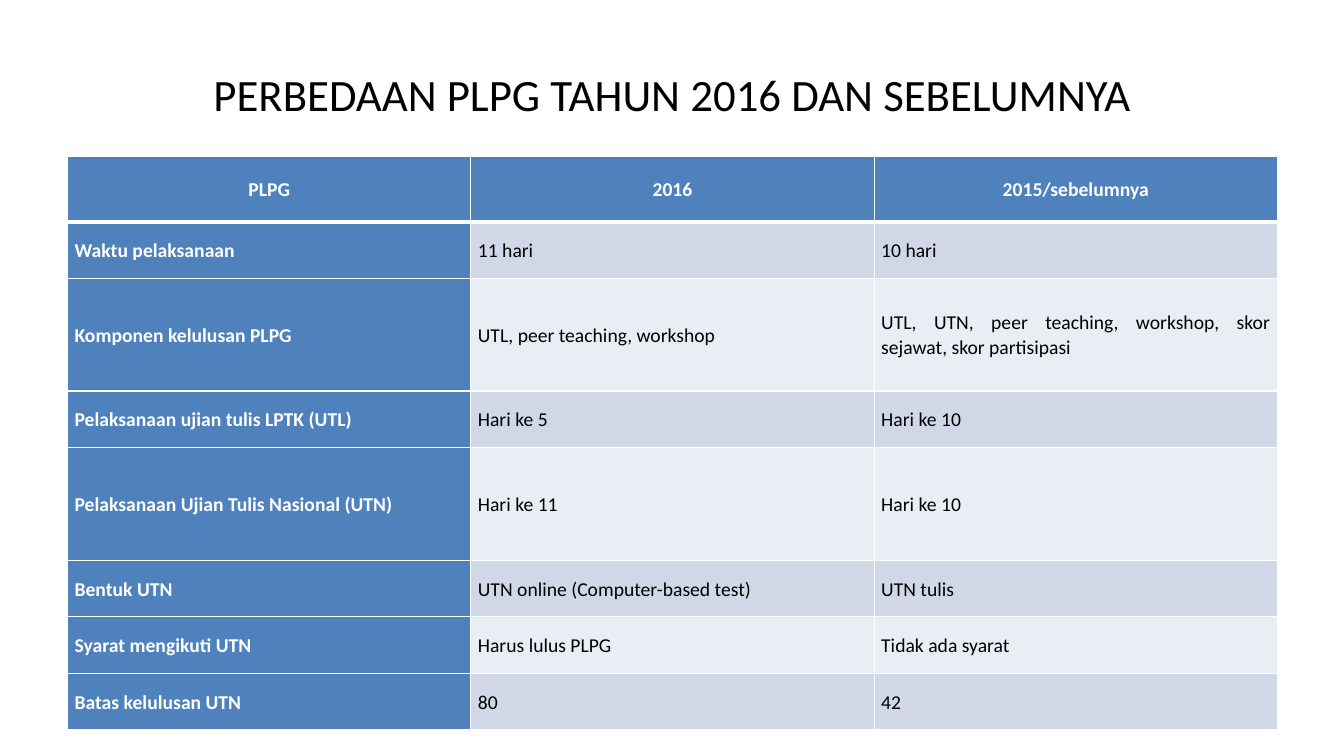
"""Builds a slide that compares PLPG 2016 with earlier years."""
from lxml.etree import SubElement
from pptx import Presentation
from pptx.dml.color import RGBColor
from pptx.enum.text import MSO_ANCHOR as Anchor, MSO_AUTO_SIZE as AutoSize, PP_ALIGN as Align
from pptx.oxml.ns import qn
from pptx.util import Inches, Pt

WHITE = RGBColor(0xFF, 0xFF, 0xFF)
BLACK = RGBColor(0, 0, 0)
BLUE = RGBColor(0x4F, 0x81, 0xBD)
BAND_DARK = RGBColor(0xD0, 0xD8, 0xE8)
BAND_LIGHT = RGBColor(0xE9, 0xED, 0xF4)

TITLE = "PERBEDAAN PLPG TAHUN 2016 DAN SEBELUMNYA"
ROWS = [
    (0.65, "PLPG", "2016", "2015/sebelumnya"),
    (0.56, "Waktu pelaksanaan", "11 hari", "10 hari"),
    (1.12, "Komponen kelulusan PLPG", "UTL, peer teaching, workshop",
     "UTL, UTN, peer teaching, workshop, skor sejawat, skor partisipasi"),
    (0.56, "Pelaksanaan ujian tulis LPTK (UTL)", "Hari ke 5", "Hari ke 10"),
    (1.12, "Pelaksanaan Ujian Tulis Nasional (UTN)", "Hari ke 11", "Hari ke 10"),
    (0.56, "Bentuk UTN", "UTN online (Computer-based test)", "UTN tulis"),
    (0.56, "Syarat mengikuti UTN", "Harus lulus PLPG", "Tidak ada syarat"),
    (0.56, "Batas kelulusan UTN", "80", "42"),
]


class SlideBuilder:
    font = "Calibri"
    left, width = Inches(0.67), Inches(12)

    def __init__(self, deck):
        self.page = deck.slides.add_slide(deck.slide_layouts[5])

    def add_text(self, frame, text, size, color, align, bold=False, spacing=1.0):
        para = frame.paragraphs[0]
        para.alignment, para.line_spacing = align, spacing
        span = para.add_run()
        span.text = text
        span.font.color.rgb = color
        for name, value in {"name": self.font, "size": Pt(size), "bold": bold}.items():
            setattr(span.font, name, value)

    def title(self, text, top, height):
        box = self.page.shapes.title
        for name, value in {"left": self.left, "top": Inches(top), "width": self.width,
                            "height": Inches(height)}.items():
            setattr(box, name, value)
        frame = box.text_frame
        for name, value in {"margin_left": Inches(0.11), "margin_right": Inches(0.11),
                            "margin_top": Inches(0.06), "margin_bottom": Inches(0.06),
                            "vertical_anchor": Anchor.MIDDLE, "word_wrap": True,
                            "auto_size": AutoSize.NONE}.items():
            setattr(frame, name, value)
        self.add_text(frame, text, 32, BLACK, Align.CENTER)

    def borders(self, cell, top, bottom):
        properties = cell._tc.get_or_add_tcPr()
        for side, points in {"lnL": 1, "lnR": 1, "lnT": top, "lnB": bottom}.items():
            line = SubElement(properties, qn(f"a:{side}"), w=str(Pt(points)))
            fill = SubElement(line, qn("a:solidFill"))
            SubElement(fill, qn("a:srgbClr"), val=str(WHITE))

    def cell(self, cell, text, row, column):
        heading = row == 0 or column == 0
        band = BAND_DARK if row % 2 else BAND_LIGHT
        self.borders(cell, top=3 if row == 1 else 1, bottom=3 if row == 0 else 1)
        cell.fill.solid()
        cell.fill.fore_color.rgb = BLUE if heading else band
        for name, value in {"margin_left": Inches(0.07), "margin_right": Inches(0.07),
                            "margin_top": 0, "margin_bottom": 0,
                            "vertical_anchor": Anchor.MIDDLE}.items():
            setattr(cell, name, value)
        self.add_text(cell.text_frame, text, 14, WHITE if heading else BLACK,
                      Align.JUSTIFY if row else Align.CENTER, heading, 1.07)

    def table(self, rows, top):
        columns = len(rows[0]) - 1
        height = Inches(sum(row[0] for row in rows))
        table = self.page.shapes.add_table(
            len(rows), columns, self.left, Inches(top), self.width, height).table
        for row, (row_height, *texts) in enumerate(rows):
            table.rows[row].height = Inches(row_height)
            for column, text in enumerate(texts):
                self.cell(table.cell(row, column), text, row, column)


def main():
    deck = Presentation()
    deck.slide_width, deck.slide_height = Inches(13.33), Inches(7.5)
    builder = SlideBuilder(deck)
    builder.title(TITLE, top=0.3, height=1.25)
    builder.table(ROWS, top=1.55)
    deck.save("out.pptx")


if __name__ == "__main__":
    main()
